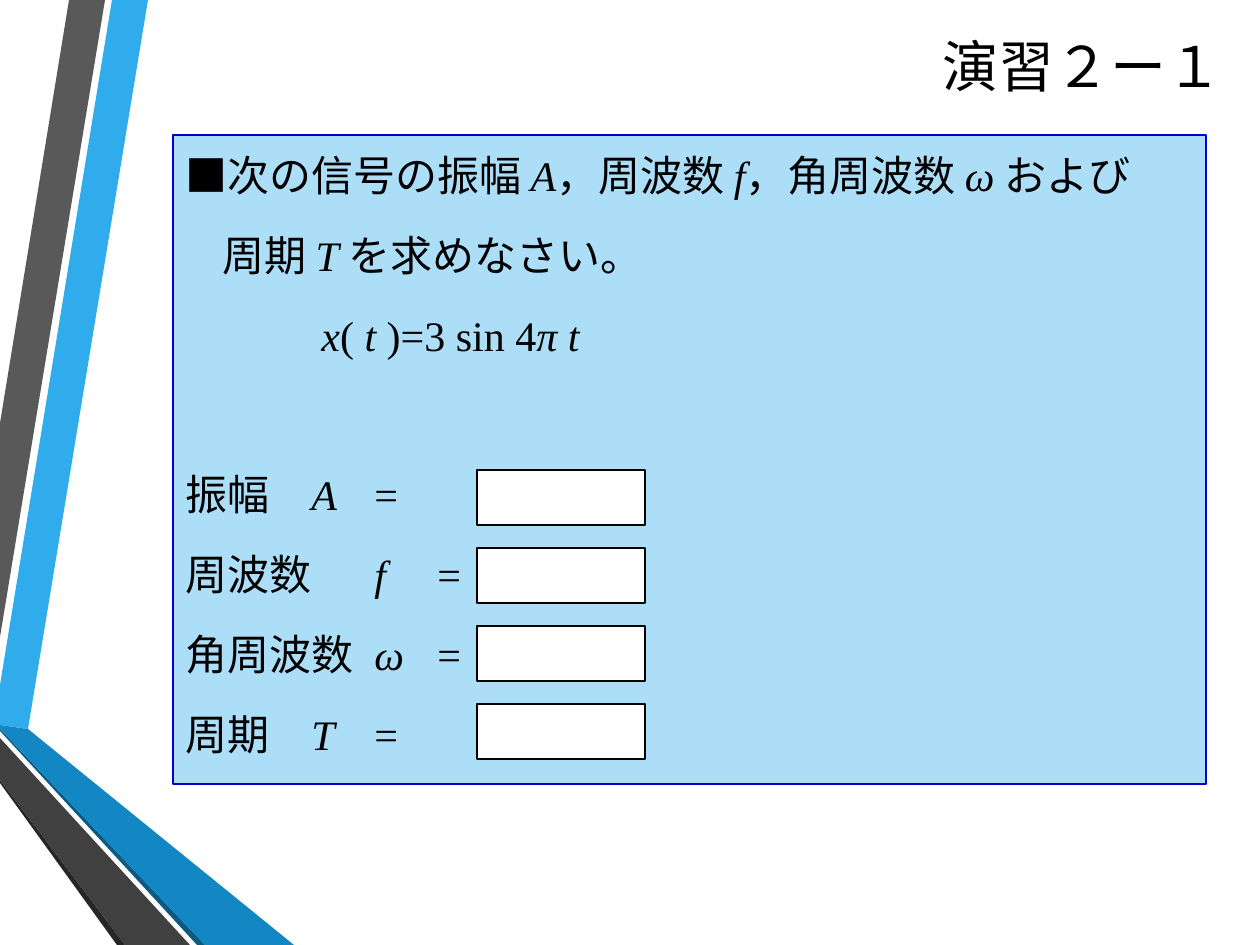
import pptx
import pptx.dml.color
import pptx.enum.shapes
import pptx.enum.text
import pptx.oxml
import pptx.oxml.ns
import pptx.util
from lxml import etree

RGBColor = pptx.dml.color.RGBColor
BLACK = RGBColor(0x00, 0x00, 0x00)
WHITE = RGBColor(0xFF, 0xFF, 0xFF)
PANEL_FILL = RGBColor(0xAC, 0xDE, 0xF7)
PANEL_LINE = RGBColor(0x00, 0x00, 0xCC)
SKY = RGBColor(0x30, 0xAC, 0xEC)
BLUE = RGBColor(0x12, 0x87, 0xC3)
DARK_BLUE = RGBColor(0x0C, 0x5A, 0x82)
GRAY = RGBColor(0x59, 0x59, 0x59)
DARK_GRAY = RGBColor(0x40, 0x40, 0x40)
CHARCOAL = RGBColor(0x26, 0x26, 0x26)

PX_PER_INCH = 126
EMU_PER_PX = 914400 / PX_PER_INCH
LINE_PITCH = 33.6
PARAGRAPH_GAP = 6
BLANK_LINE = LINE_PITCH + 2 * PARAGRAPH_GAP

RIBBONS = [
    (SKY, [(0, 685), (0, 725), (28, 729), (148, 0), (112, 0)]),
    (GRAY, [(105, 0), (69, 0), (0, 423), (0, 637)]),
    (CHARCOAL, [(0, 780), (0, 783), (117, 945), (125, 945)]),
    (DARK_BLUE, [(0, 729), (0, 731), (197, 945), (205, 945)]),
    (BLUE, [(0, 729), (205, 945), (294, 945), (28, 729), (0, 725)]),
    (DARK_GRAY, [(0, 780), (125, 945), (190, 945), (0, 738)]),
]

# Each tuple alternates upright and italic text.
QUESTION = ("■次の信号の振幅 ", "A", "，周波数 ", "f", "，角周波数 ", "ω ", "および")
QUESTION_END = ("周期 ", "T ", "を求めなさい。")
SIGNAL = ("", "x", "( ", "t ", ")=3 sin 4", "π t")
SHORT_TABS = (126, 189)
LONG_TABS = (189, 252)
ANSWERS = [
    ("振幅", "A", SHORT_TABS),
    ("周波数", "f", LONG_TABS),
    ("角周波数", "ω", LONG_TABS),
    ("周期", "T", SHORT_TABS),
]


def px(length):
    return pptx.util.Emu(round(length * EMU_PER_PX))


def add_ribbon(slide, color, points):
    builder = slide.shapes.build_freeform(*points[0], scale=EMU_PER_PX)
    builder.add_line_segments(points[1:], close=True)
    shape = builder.convert_to_shape()
    shape.shadow.inherit = False
    shape.fill.solid()
    shape.fill.fore_color.rgb = color
    shape.line.fill.background()


def add_rectangle(slide, left, top, width, height, fill, line, line_width):
    shape = slide.shapes.add_shape(
        pptx.enum.shapes.MSO_SHAPE.RECTANGLE,
        px(left), px(top), px(width), px(height),
    )
    shape.shadow.inherit = False
    shape.fill.solid()
    shape.fill.fore_color.rgb = fill
    shape.line.color.rgb = line
    shape.line.width = pptx.util.Pt(line_width)
    return shape


def add_title(slide, text):
    box = slide.shapes.add_textbox(px(173), px(-4), px(1062), px(139))
    frame = box.text_frame
    frame.word_wrap = True
    frame.vertical_anchor = pptx.enum.text.MSO_ANCHOR.MIDDLE
    paragraph = frame.paragraphs[0]
    paragraph.text = text
    paragraph.alignment = pptx.enum.text.PP_ALIGN.RIGHT
    style_font(paragraph, "Calibri", 32)


def style_font(paragraph, name, size):
    paragraph.font.name = name
    paragraph.font.size = pptx.util.Pt(size)
    paragraph.font.color.rgb = BLACK


def set_tabs(properties, stops):
    tab_list = etree.SubElement(properties, pptx.oxml.ns.qn("a:tabLst"))
    for stop in stops:
        etree.SubElement(
            tab_list, pptx.oxml.ns.qn("a:tab"), pos=str(px(stop)), algn="l"
        )


def add_line(frame, texts, indent=0, tabs=(), extra_space=0):
    first = frame.paragraphs[0]
    paragraph = frame.add_paragraph() if first.runs else first
    properties = paragraph._p.get_or_add_pPr()
    properties.set("marL", str(px(indent)))
    if tabs:
        set_tabs(properties, tabs)
    paragraph.alignment = pptx.enum.text.PP_ALIGN.LEFT
    paragraph.line_spacing = pptx.util.Pt(LINE_PITCH)
    paragraph.space_before = pptx.util.Pt(PARAGRAPH_GAP + extra_space)
    paragraph.space_after = pptx.util.Pt(PARAGRAPH_GAP)
    style_font(paragraph, "Times New Roman", 24)
    for index, text in enumerate(texts):
        if text:
            run = paragraph.add_run()
            run.text = text
            run.font.italic = index % 2 == 1


def add_exercise(slide):
    panel = add_rectangle(slide, 173, 135, 1033, 649, PANEL_FILL, PANEL_LINE, 0.75)
    frame = panel.text_frame
    frame.word_wrap = True
    frame.vertical_anchor = pptx.enum.text.MSO_ANCHOR.TOP
    add_line(frame, QUESTION)
    add_line(frame, QUESTION_END, indent=37)
    add_line(frame, SIGNAL, indent=136)
    for row, (label, symbol, tabs) in enumerate(ANSWERS):
        add_line(
            frame, (label + "\t", symbol + "\t", "="),
            tabs=tabs, extra_space=0 if row else BLANK_LINE,
        )
        add_rectangle(slide, 477, 470 + 78 * row, 168, 55, WHITE, BLACK, 1.25)


def main():
    presentation = pptx.Presentation()
    presentation.slide_width = px(1260)
    presentation.slide_height = px(945)
    slide = presentation.slides.add_slide(presentation.slide_layouts[6])
    for color, points in RIBBONS:
        add_ribbon(slide, color, points)
    add_title(slide, "演習２ー１")
    add_exercise(slide)
    presentation.save("out.pptx")


if __name__ == "__main__":
    main()
